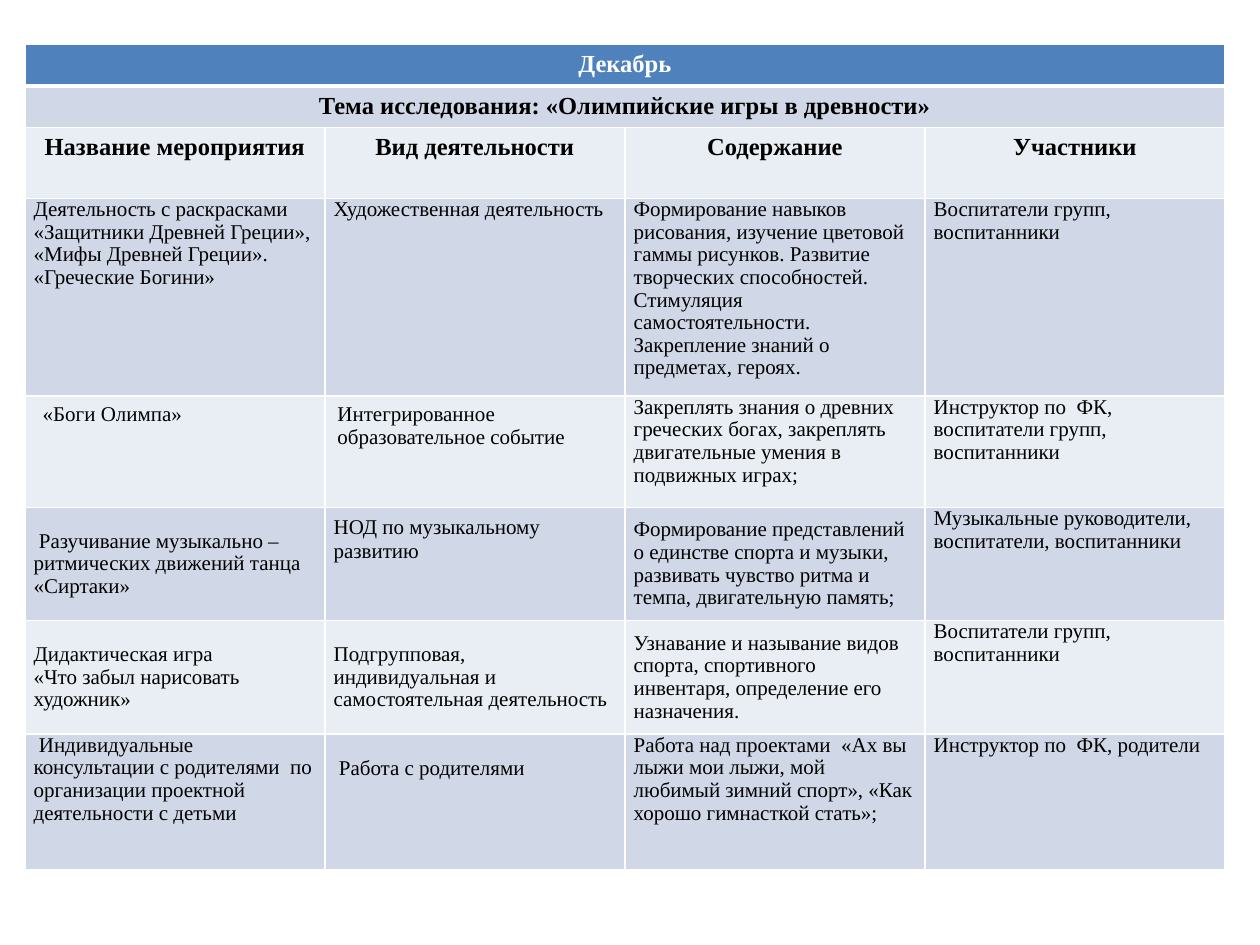
from lxml.etree import SubElement as Sub
from pptx import Presentation
from pptx.dml.color import RGBColor as RGB
from pptx.enum.text import MSO_ANCHOR as Anchor, PP_ALIGN as Align
from pptx.oxml.ns import qn
from pptx.util import Pt

WHITE = RGB(0xFF, 0xFF, 0xFF)
BLACK = RGB(0, 0, 0)
BLUE = RGB(0x4F, 0x81, 0xBD)
DARK = RGB(0xD0, 0xD8, 0xE8)
LIGHT = RGB(0xE9, 0xED, 0xF4)
FONT = "Times New Roman"

TITLE = "Декабрь"
TOPIC = "Тема исследования: «Олимпийские игры в древности»"
HEADS = ["Название мероприятия", "Вид деятельности", "Содержание", "Участники"]
HIGH = [23.76, 23.76, 40.5, 113, 63.5, 64.8, 64.8, 77.5]

# Cell formats
MID = {"anchor": Anchor.MIDDLE}
WIDE = {"side": 7.2, "top": 3.6, "space": 1}

# Events: each cell is a text and its format
EVENTS = [
    [("Деятельность с раскрасками\n«Защитники Древней Греции», «Мифы Древней Греции». "
      "«Греческие Богини»", {}),
     ("Художественная деятельность", {}),
     ("Формирование навыков рисования, изучение цветовой гаммы рисунков. "
      "Развитие творческих способностей. Стимуляция самостоятельности. "
      "Закрепление знаний о предметах, героях.", {}),
     ("Воспитатели групп, воспитанники", {})],
    [("«Боги Олимпа»", {**WIDE, "indent": 3}),
     ("Интегрированное образовательное событие", WIDE),
     ("Закреплять знания о древних греческих богах, закреплять двигательные "
      "умения в подвижных играх;", {}),
     ("Инструктор по  ФК, воспитатели групп, воспитанники", {})],
    [("Разучивание музыкально – ритмических движений танца «Сиртаки»",
      {**MID, "indent": 3}),
     ("НОД по музыкальному развитию", {"top": 5, "space": 1}),
     ("Формирование представлений о единстве спорта и музыки, развивать "
      "чувство ритма и темпа, двигательную память;", MID),
     ("Музыкальные руководители, воспитатели, воспитанники", {})],
    [("Дидактическая игра\n«Что забыл нарисовать художник»", MID),
     ("Подгрупповая, индивидуальная и самостоятельная деятельность", MID),
     ("Узнавание и называние видов спорта, спортивного инвентаря, "
      "определение его назначения.", MID),
     ("Воспитатели групп, воспитанники", {})],
    [("Индивидуальные консультации с родителями  по организации проектной "
      "деятельности с детьми", {"indent": 3}),
     ("Работа с родителями", {"top": 13.4, "indent": 3}),
     ("Работа над проектами  «Ах вы лыжи мои лыжи, мой любимый зимний спорт», "
      "«Как хорошо гимнасткой стать»;", {}),
     ("Инструктор по  ФК, родители", {})],
]


def write(cell, text, size=12, bold=False, color=BLACK, align=Align.LEFT,
          anchor=Anchor.TOP, side=5.04, top=0, space=0.97, indent=0):
    """Put text in a cell, one paragraph for each line."""
    cell.margin_left = cell.margin_right = Pt(side)
    cell.margin_top, cell.margin_bottom = Pt(top), Pt(0)
    cell.vertical_anchor = anchor
    frame = cell.text_frame
    frame.word_wrap = True
    frame.text = text
    for para in frame.paragraphs:
        para.alignment = align
        para.line_spacing = space
        if indent:
            para._p.get_or_add_pPr().set("indent", str(Pt(indent)))
        for run in para.runs:
            font = run.font
            font.name, font.size, font.bold = FONT, Pt(size), bold
            font.color.rgb = color


def paint(cell, fill, over=1, under=1):
    """Fill a cell and give it white borders."""
    cell.fill.solid()
    cell.fill.fore_color.rgb = fill
    props = cell._tc.get_or_add_tcPr()
    for spot, (edge, width) in enumerate(
            [("lnL", 1), ("lnR", 1), ("lnT", over), ("lnB", under)]):
        line = Sub(props, qn("a:" + edge), w=str(Pt(width)))
        Sub(Sub(line, qn("a:solidFill")), qn("a:srgbClr"), val=str(WHITE))
        props.insert(spot, line)


def plan(slide, left, top, width):
    """Draw the month plan as a table."""
    shape = slide.shapes.add_table(len(HIGH), len(HEADS), Pt(left), Pt(top),
                                   Pt(width), Pt(sum(HIGH)))
    table = shape.table
    table.horz_banding = table.first_row = False
    for col in table.columns:
        col.width = Pt(width / len(HEADS))
    for num, (row, high) in enumerate(zip(table.rows, HIGH)):
        row.height = Pt(high)
        fill = BLUE if num == 0 else DARK if num % 2 else LIGHT
        for cell in row.cells:
            paint(cell, fill, over=3 if num == 1 else 1, under=3 if num == 0 else 1)

    # Title, topic and column heads
    head = {**WIDE, "size": 14, "bold": True, "align": Align.CENTER}
    for num, (text, color) in enumerate([(TITLE, WHITE), (TOPIC, BLACK)]):
        table.cell(num, 0).merge(table.cell(num, len(HEADS) - 1))
        write(table.cell(num, 0), text, color=color, **head)
    for num, text in enumerate(HEADS):
        write(table.cell(2, num), text, **head)

    # Events
    for num, event in enumerate(EVENTS, 3):
        for col, (text, form) in enumerate(event):
            write(table.cell(num, col), text, **form)


def main():
    deck = Presentation()
    deck.slide_width, deck.slide_height = Pt(720), Pt(540)
    slide = deck.slides.add_slide(deck.slide_layouts[6])
    plan(slide, 14.2, 25.4, 685.8)
    deck.save("out.pptx")


if __name__ == "__main__":
    main()
